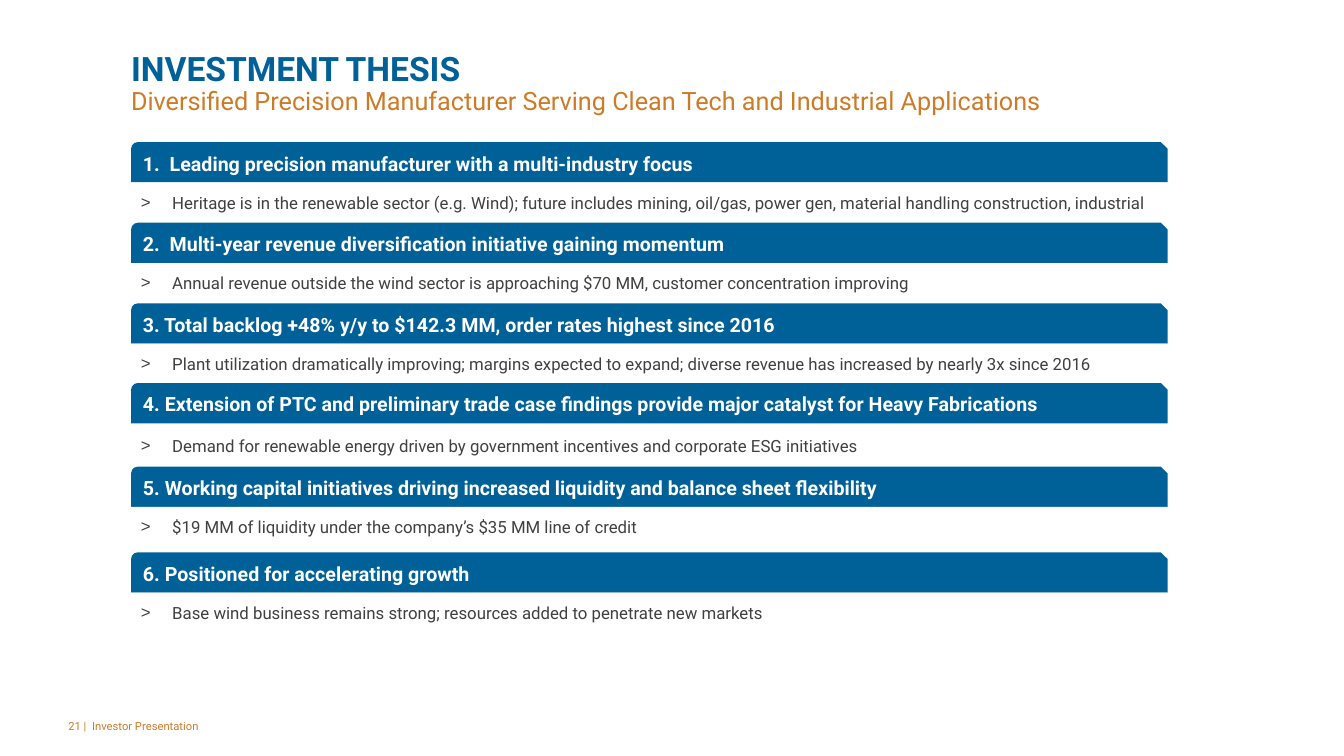
from lxml import etree
from pptx import Presentation
from pptx.dml.color import RGBColor
from pptx.enum import shapes, text
from pptx.oxml.ns import qn
from pptx.util import Inches, Pt

TITLE = "INVESTMENT THESIS"
SUB = "Diversified Precision Manufacturer Serving Clean Tech and Industrial Applications"
FOOT = "21 |  Investor Presentation"
POINTS = [
    (1.41, 1.81, "1.  Leading precision manufacturer with a multi-industry focus",
     "Heritage is in the renewable sector (e.g. Wind); future includes mining, oil/gas, power gen, "
     "material handling construction, industrial"),
    (2.21, 2.61, "2.  Multi-year revenue diversification initiative gaining momentum",
     "Annual revenue outside the wind sector is approaching $70 MM, customer concentration improving"),
    (3.01, 3.41, "3. Total backlog +48% y/y to $142.3 MM, order rates highest since 2016",
     "Plant utilization dramatically improving; margins expected to expand; "
     "diverse revenue has increased by nearly 3x since 2016"),
    (3.8, 4.22, "4. Extension of PTC and preliminary trade case findings provide major catalyst "
     "for Heavy Fabrications",
     "Demand for renewable energy driven by government incentives and corporate ESG initiatives"),
    (4.63, 5.03, "5. Working capital initiatives driving increased liquidity and balance sheet flexibility",
     "$19 MM of liquidity under the company’s $35 MM line of credit"),
    (5.48, 5.88, "6. Positioned for accelerating growth",
     "Base wind business remains strong; resources added to penetrate new markets"),
]
COLORS = {"blue": "006198", "gold": "CE7B28", "white": "FFFFFF", "gray": "404040"}
LEFT, WIDTH, HEIGHT = 1.3, 10.28, 0.4
INDENT = 0.31


def paint(name):
    return RGBColor.from_string(COLORS[name])


def style(run, size, color, bold=False):
    run.font.name = "Roboto"
    run.font.size = Pt(size)
    run.font.bold = bold
    run.font.color.rgb = paint(color)


def add_box(slide, left, top, width, height, words):
    box = slide.shapes.add_textbox(*map(Inches, (left, top, width, height)))
    frame = box.text_frame
    frame.word_wrap = True
    frame.vertical_anchor = text.MSO_ANCHOR.MIDDLE
    frame.paragraphs[0].text = words
    return frame


def add_bar(slide, kind, top, fill, words, size, color, bold):
    bar = slide.shapes.add_shape(kind, *map(Inches, (LEFT, top, WIDTH, HEIGHT)))
    bar.shadow.inherit = False
    bar.fill.solid()
    bar.fill.fore_color.rgb = paint(fill)
    bar.line.fill.background()
    frame = bar.text_frame
    frame.word_wrap = True
    frame.vertical_anchor = text.MSO_ANCHOR.MIDDLE
    para = frame.paragraphs[0]
    para.text = words
    para.alignment = text.PP_ALIGN.LEFT
    style(para.runs[0], size, color, bold)
    return para


def add_bullet(para):
    props = para._p.get_or_add_pPr()
    props.set("marL", str(Inches(INDENT)))
    props.set("indent", str(-Inches(INDENT)))
    etree.SubElement(props, qn("a:buFont")).set("typeface", "Arial")
    etree.SubElement(props, qn("a:buChar")).set("char", ">")


def main():
    deck = Presentation()
    deck.slide_width, deck.slide_height = Inches(13.33), Inches(7.5)
    slide = deck.slides.add_slide(deck.slide_layouts[6])

    head = add_box(slide, LEFT, 0.52, 10.81, 0.63, TITLE + "\v" + SUB)
    head.vertical_anchor = text.MSO_ANCHOR.BOTTOM
    head.margin_left = head.margin_right = head.margin_top = head.margin_bottom = 0
    para = head.paragraphs[0]
    para.line_spacing = 0.9
    style(para.runs[0], 24, "blue", True)
    style(para.runs[1], 18, "gold")

    foot = add_box(slide, 0.58, 7, 3, 0.4, FOOT)
    style(foot.paragraphs[0].runs[0], 8, "gold")

    kinds = shapes.MSO_SHAPE
    for top, below, claim, proof in POINTS:
        add_bar(slide, kinds.SNIP_ROUND_RECTANGLE, top, "blue", claim, 14, "white", True)
        add_bullet(add_bar(slide, kinds.RECTANGLE, below, "white", proof, 12, "gray", False))

    deck.save("out.pptx")


if __name__ == "__main__":
    main()
